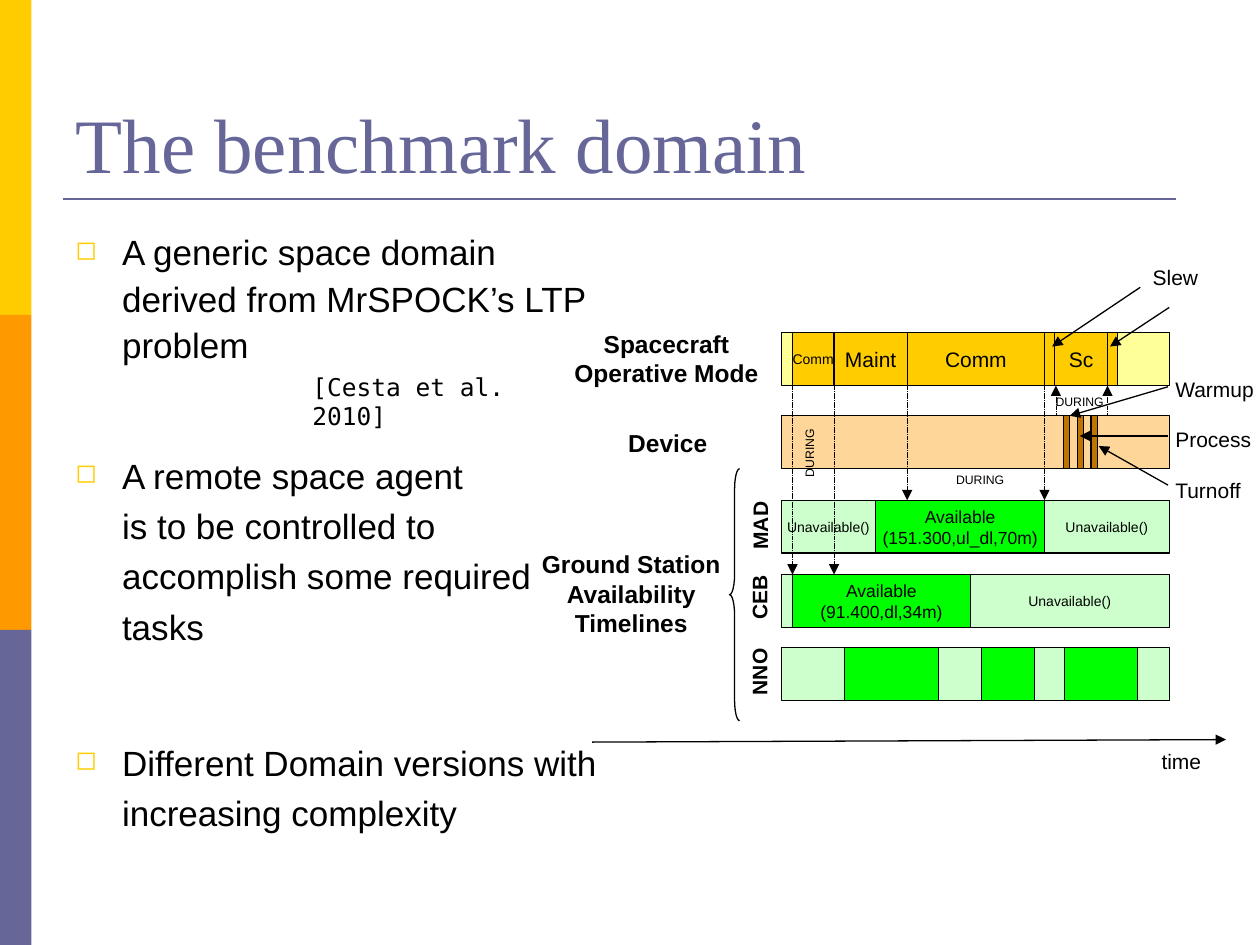
from lxml import etree
from pptx import Presentation
from pptx.dml.color import RGBColor
from pptx.enum import dml, shapes, text
from pptx.oxml.ns import qn
from pptx.util import Inches, Pt

COLORS = {
    "black": "000000", "slate": "666699", "gold": "FFCC00", "orange": "FF9900",
    "idle": "FFFF99", "device": "FFD699", "step": "BF7300",
    "available": "00FF00", "unavailable": "CCFFCC",
}
CENTER = text.PP_ALIGN.CENTER

prs = Presentation()
prs.slide_width, prs.slide_height = Inches(10), Inches(7.5)
slide = prs.slides.add_slide(prs.slide_layouts[5])
items = slide.shapes


def write(frame, content, size=12, font="Arial", color="black", bold=False,
          align=text.PP_ALIGN.LEFT, anchor=text.MSO_ANCHOR.TOP, wrap=False):
    """Fill a text frame, one paragraph per line of content."""
    frame.word_wrap = wrap
    frame.auto_size = text.MSO_AUTO_SIZE.NONE
    frame.vertical_anchor = anchor
    frame.text = content
    for paragraph in frame.paragraphs:
        paragraph.alignment = align
        paragraph.font.size = Pt(size)
        paragraph.font.name = font
        paragraph.font.bold = bold
        paragraph.font.color.rgb = RGBColor.from_string(COLORS[color])


def connect(start, end, color="black", width=0.75, dashed=False, arrow=True):
    line = items.add_connector(shapes.MSO_CONNECTOR.STRAIGHT,
                               *(Inches(v) for v in (*start, *end)))
    line.line.color.rgb = RGBColor.from_string(COLORS[color])
    line.line.width = Pt(width)
    if dashed:
        line.line.dash_style = dml.MSO_LINE.SQUARE_DOT
    if arrow:
        etree.SubElement(line.line._get_or_add_ln(), qn("a:tailEnd"), type="triangle")
    etree.SubElement(line._element.spPr, qn("a:effectLst"))


# Side band, title and rule
for i, color in enumerate(("gold", "orange", "slate")):
    band = items.add_shape(shapes.MSO_SHAPE.RECTANGLE, 0, Inches(2.5 * i),
                           Inches(0.25), Inches(2.5))
    band.shadow.inherit = False
    band.fill.solid()
    band.fill.fore_color.rgb = RGBColor.from_string(COLORS[color])
    band.line.fill.background()

title = items.title
title.left, title.top, title.width, title.height = (
    Inches(v) for v in (0.5, 0.3, 9, 1.25))
write(title.text_frame, "The benchmark domain", size=44, font="Times New Roman",
      color="slate", anchor=text.MSO_ANCHOR.BOTTOM, wrap=True)
connect((0.5, 1.58), (9.33, 1.58), color="slate", width=1.5, arrow=False)

# Bullets: text, line spacing, space before
bullets = [
    ("A generic space domain derived from MrSPOCK’s LTP problem", 1.1, 0),
    ("A remote space agent\vis to be controlled to accomplish some required tasks", 1.2, 40),
    ("Different Domain versions with increasing complexity", 1.2, 43),
]
body = items.add_textbox(Inches(0.5), Inches(1.75), Inches(4.42), Inches(4.95)).text_frame
body.text = "\n".join(content for content, _, _ in bullets)
for paragraph, (_, spacing, before) in zip(body.paragraphs, bullets):
    paragraph.line_spacing = spacing
    paragraph.space_before = Pt(before)
    paragraph.space_after = Pt(6)
    props = paragraph._p.get_or_add_pPr()
    props.set("marL", str(Inches(0.37)))
    props.set("indent", str(-Inches(0.37)))
    bullet_color = etree.SubElement(props, qn("a:buClr"))
    etree.SubElement(bullet_color, qn("a:srgbClr"), val=COLORS["gold"])
    etree.SubElement(props, qn("a:buSzPct"), val="75000")
    etree.SubElement(props, qn("a:buChar"), char="◻")
    paragraph.font.size = Pt(20)
    paragraph.font.name = "Arial"
    paragraph.font.color.rgb = RGBColor.from_string(COLORS["black"])
body.word_wrap = True

citation = items.add_textbox(Inches(2.38), Inches(2.9), Inches(1.95), Inches(0.34))
write(citation.text_frame, "[Cesta et al. 2010]", size=14, font="DejaVu Sans Mono", wrap=True)

# Timelines: top, then segments of left, width, colour, label, label size
LEFT, WIDTH, HEIGHT = 6.2, 3.08, 0.42
timelines = [
    (2.64, [(LEFT, WIDTH, "idle", "", 12), (6.29, 0.33, "gold", "Comm", 8),
            (6.62, 0.58, "gold", "Maint", 12), (7.2, 1.09, "gold", "Comm", 12),
            (8.29, 0.08, "gold", "", 12), (8.37, 0.42, "gold", "Sc", 12),
            (8.79, 0.08, "gold", "", 12)]),
    (3.3, [(LEFT, WIDTH, "device", "", 12)]
     + [(8.44 + 0.11 * i, 0.05, "step", "", 12) for i in range(3)]),
    (3.97, [(LEFT, 0.75, "unavailable", "Unavailable()", 8),
            (6.95, 1.34, "available", "Available\n(151.300,ul_dl,70m)", 10),
            (8.29, 0.99, "unavailable", "Unavailable()", 8)]),
    (4.56, [(LEFT, 0.09, "unavailable", "", 8),
            (6.29, 1.41, "available", "Available\n(91.400,dl,34m)", 10),
            (7.7, 1.58, "unavailable", "Unavailable()", 8)]),
    (5.14, [(LEFT, WIDTH, "unavailable", "", 8), (6.7, 0.75, "available", "", 8),
            (7.79, 0.42, "available", "", 8), (8.45, 0.58, "available", "", 8)]),
]
for top, segments in timelines:
    for left, width, color, label, size in segments:
        segment = items.add_shape(shapes.MSO_SHAPE.RECTANGLE, Inches(left), Inches(top),
                                  Inches(width), Inches(HEIGHT))
        segment.shadow.inherit = False
        segment.fill.solid()
        segment.fill.fore_color.rgb = RGBColor.from_string(COLORS[color])
        segment.line.color.rgb = RGBColor.from_string(COLORS["black"])
        segment.line.width = Pt(0.75)
        if label:
            write(segment.text_frame, label, size=size, align=CENTER,
                  anchor=text.MSO_ANCHOR.MIDDLE)

brace = items.add_shape(shapes.MSO_SHAPE.LEFT_BRACE, Inches(5.79), Inches(3.72),
                        Inches(0.08), Inches(2))
brace.adjustments[0], brace.adjustments[1] = 2, 0.5
brace.shadow.inherit = False
brace.fill.background()
brace.line.color.rgb = RGBColor.from_string(COLORS["black"])
brace.line.width = Pt(0.75)

# Synchronisation links, time axis and pointers to the short activities
for start, end in [((8.29, 3.06), (8.29, 3.97)), ((7.2, 3.06), (7.2, 3.97)),
                   ((6.62, 3.06), (6.62, 4.56)), ((6.29, 3.06), (6.29, 4.56)),
                   ((8.79, 3.3), (8.79, 3.06)), ((8.38, 3.3), (8.38, 3.06))]:
    connect(start, end, width=0.25, dashed=True)
for start, end in [((4.7, 5.89), (9.73, 5.87)),
                   ((9.28, 2.44), (8.81, 2.75)), ((9.05, 2.28), (8.35, 2.75)),
                   ((9.27, 3.07), (8.49, 3.3)), ((9.27, 3.46), (8.57, 3.46)),
                   ((9.27, 3.85), (8.72, 3.54))]:
    connect(start, end)

# Labels: text, left, top, width, height, rotation, format
heading = {"size": 14, "bold": True, "align": CENTER}
station = {"bold": True}
labels = [
    ("Spacecraft\nOperative Mode", 4.46, 2.56, 1.66, 0.57, 0, heading),
    ("Device", 4.88, 3.35, 0.84, 0.34, 0, heading),
    ("Ground Station\nAvailability\nTimelines", 4.2, 4.31, 1.62, 0.8, 0, heading),
    ("MAD", 5.74, 4.02, 0.58, 0.3, 270, station),
    ("CEB", 5.75, 4.59, 0.55, 0.3, 270, station),
    ("NNO", 5.74, 5.18, 0.57, 0.3, 270, station),
    ("DURING", 8.28, 3.08, 0.59, 0.22, 0, {"size": 7}),
    ("DURING", 7.49, 3.7, 0.59, 0.22, 0, {"size": 7}),
    ("DURING", 6.13, 3.48, 0.59, 0.22, 270, {"size": 7}),
    ("Slew", 9.05, 2.05, 0.56, 0.3, 0, {}),
    ("time", 9.12, 5.89, 0.52, 0.3, 0, {}),
]
for i, step in enumerate(("Warmup", "Process", "Turnoff")):
    labels.append((step, 9.23, 2.94 + 0.4 * i, 0.83, 0.3, 0, {}))
for content, left, top, width, height, rotation, style in labels:
    label = items.add_textbox(Inches(left), Inches(top), Inches(width), Inches(height))
    label.rotation = rotation
    write(label.text_frame, content, **style)

prs.save("out.pptx")
